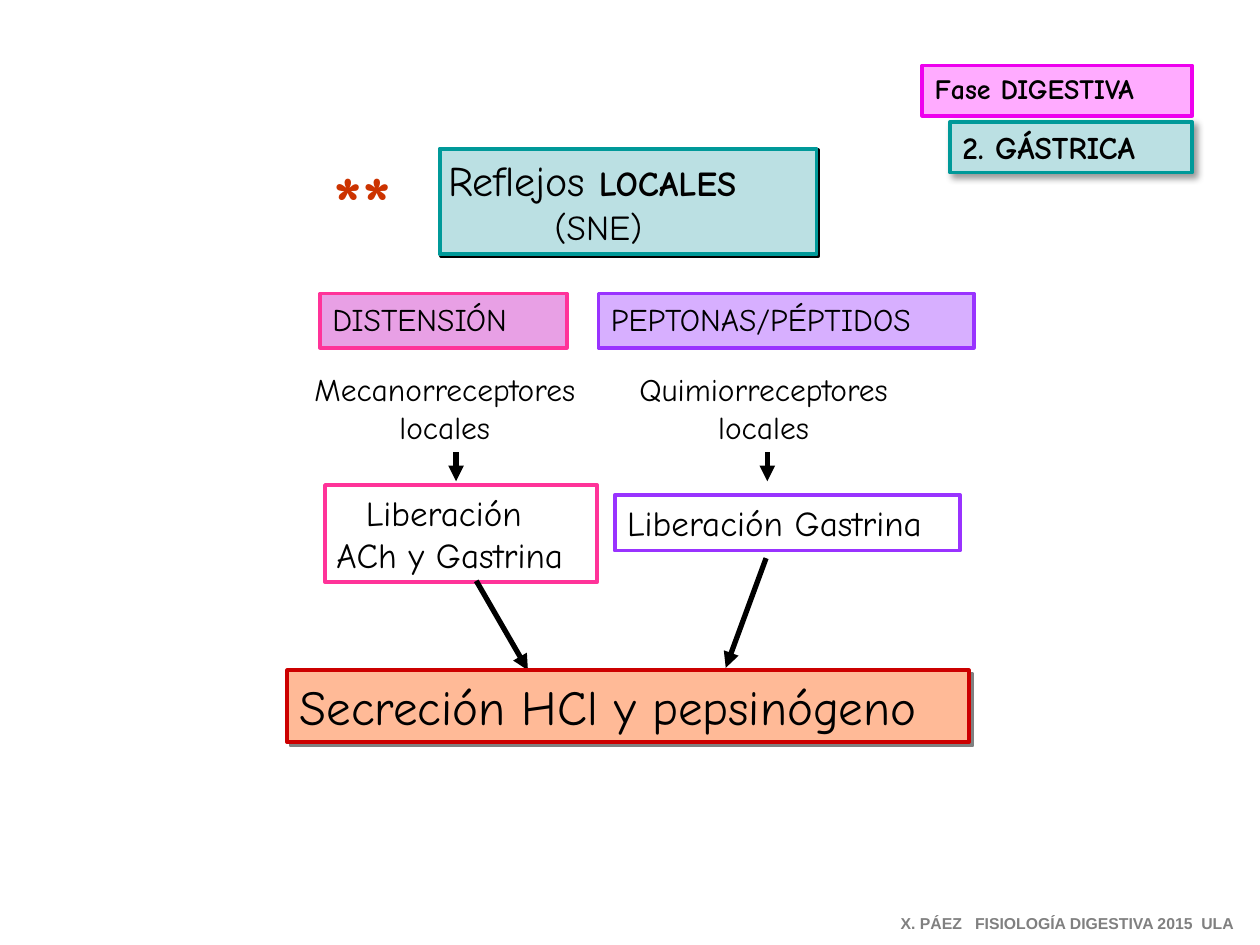
from lxml.etree import SubElement
from pptx import Presentation
from pptx.dml.color import RGBColor
from pptx.enum.shapes import MSO_CONNECTOR, MSO_SHAPE
from pptx.enum.text import MSO_ANCHOR, MSO_AUTO_SIZE, PP_ALIGN
from pptx.oxml.ns import qn
from pptx.util import Inches, Pt

COLORS = {
    "black": "000000", "gray": "808080", "star": "CC3300",
    "aqua": "BBE0E3", "teal": "009999",
    "rose": "E8A0E5", "pink": "FF3399",
    "lilac": "D7AFFF", "violet": "9933FF",
    "peach": "FFBA97", "red": "CC0000",
    "candy": "FFABFF", "magenta": "EE00EE",
}
FONT = "Comic Neue"


def color(name):
    return RGBColor.from_string(COLORS[name])


def add_shadow(effects, name, dist, blur=0, alpha=100):
    outer = SubElement(effects, qn("a:outerShdw"), blurRad=str(Pt(blur)),
                       dist=str(Pt(dist)), dir="2700000", algn="ctr", rotWithShape="0")
    fill = SubElement(outer, qn("a:srgbClr"), val=COLORS[name])
    SubElement(fill, qn("a:alpha"), val=str(alpha * 1000))


def set_font(font, size, bold=False, tint="black", face=FONT):
    font.size, font.bold, font.name = Pt(size), bold, face
    font.color.rgb = color(tint)


def write(shape, lines, size, right=None, **style):
    frame = shape.text_frame
    frame.word_wrap = True
    frame.auto_size = MSO_AUTO_SIZE.NONE
    frame.vertical_anchor = MSO_ANCHOR.TOP
    if right is not None:
        frame.margin_left, frame.margin_right = 0, Inches(right)
    for i, line in enumerate(lines):
        para = frame.paragraphs[0] if i == 0 else frame.add_paragraph()
        para.alignment = PP_ALIGN.LEFT if right is None else PP_ALIGN.CENTER
        para.add_run().text = line
        set_font(para.font, size, **style)
    return frame


def add_box(slide, box, fill, edge, shadow=None):
    shape = slide.shapes.add_shape(MSO_SHAPE.RECTANGLE, *map(Inches, box))
    shape.shadow.inherit = False
    if fill:
        shape.fill.solid()
        shape.fill.fore_color.rgb = color(fill)
    else:
        shape.fill.background()
    shape.line.color.rgb = color(edge)
    shape.line.width = Pt(2.25)
    if shadow:
        add_shadow(shape._element.spPr.find(qn("a:effectLst")), *shadow)
    return shape


def add_label(slide, box, lines, size, right=None, **style):
    return write(slide.shapes.add_textbox(*map(Inches, box)), lines, size, right, **style)


def add_arrow(slide, start, end):
    line = slide.shapes.add_connector(MSO_CONNECTOR.STRAIGHT, *map(Inches, start + end))
    line.line.color.rgb = color("black")
    line.line.width = Pt(3)
    SubElement(line.line._get_or_add_ln(), qn("a:tailEnd"), type="triangle")
    SubElement(line._element.spPr, qn("a:effectLst"))


def add_phase(slide, left, top):
    write(add_box(slide, (left, top, 2.14, 0.4), "candy", "magenta"),
          ["Fase DIGESTIVA"], 16, bold=True)
    write(add_box(slide, (left + 0.22, top + 0.45, 1.92, 0.4), "aqua", "teal",
                  ("black", 3, 4, 40)), ["2. GÁSTRICA"], 18, bold=True)


def add_heading(slide, left, top):
    stars = add_label(slide, (left, top, 0.96, 0.84), ["**"], 44, 0, bold=True, tint="star")
    props = stars.paragraphs[0].runs[0].font
    set_font(props, 44, True, "star")
    effects = props._element.makeelement(qn("a:effectLst"), {})
    props._element.find(qn("a:solidFill")).addnext(effects)
    add_shadow(effects, "black", 3)

    box = add_box(slide, (left + 1.09, top, 2.99, 0.84), "aqua", "teal", ("black", 1.4))
    first = write(box, ["Reflejos ", "(SNE)"], 20, 0.47).paragraphs[0]
    set_font(first.runs[0].font, 24)
    strong = first.add_run()
    strong.text = "LOCALES "
    set_font(strong.font, 20, True)


def add_cause(slide, box, text, fill, edge):
    write(add_box(slide, box, fill, edge), [text], 18)


def add_sensor(slide, box, kind, right, middle):
    add_label(slide, box, [kind, "locales"], 18, right)
    foot = box[1] + box[3]
    add_arrow(slide, (middle, foot), (middle, foot + 0.23))


def add_release(slide, box, lines, edge, right, start, end):
    write(add_box(slide, box, None, edge), lines, 20, right)
    add_arrow(slide, start, end)


def main():
    deck = Presentation()
    deck.slide_width, deck.slide_height = Inches(10), Inches(7.5)
    slide = deck.slides.add_slide(deck.slide_layouts[6])

    add_heading(slide, 2.4, 1.18)
    add_cause(slide, (2.54, 2.33, 1.96, 0.43), "DISTENSIÓN", "rose", "pink")
    add_cause(slide, (4.75, 2.33, 2.98, 0.43), "PEPTONAS/PÉPTIDOS", "lilac", "violet")
    add_sensor(slide, (2.4, 2.89, 2.48, 0.7), "Mecanorreceptores", 0.22, 3.62)
    add_sensor(slide, (4.98, 2.89, 2.42, 0.7), "Quimiorreceptores", 0.26, 6.09)
    add_release(slide, (2.58, 3.85, 2.16, 0.77), ["Liberación ", "ACh y Gastrina"],
                "pink", 0.18, (3.78, 4.61), (4.19, 5.32))
    add_release(slide, (4.88, 3.93, 2.74, 0.44), ["Liberación Gastrina"],
                "violet", None, (6.08, 4.43), (5.76, 5.3))
    write(add_box(slide, (2.28, 5.32, 5.41, 0.57), "peach", "red", ("gray", 2.8)),
          ["Secreción HCl y pepsinógeno"], 28)
    add_phase(slide, 7.32, 0.52)
    add_label(slide, (7.05, 7.2, 2.9, 0.25), ["X. PÁEZ   FISIOLOGÍA DIGESTIVA 2015  ULA"],
              9, bold=True, tint="gray", face="Arial")
    deck.save("out.pptx")


if __name__ == "__main__":
    main()
